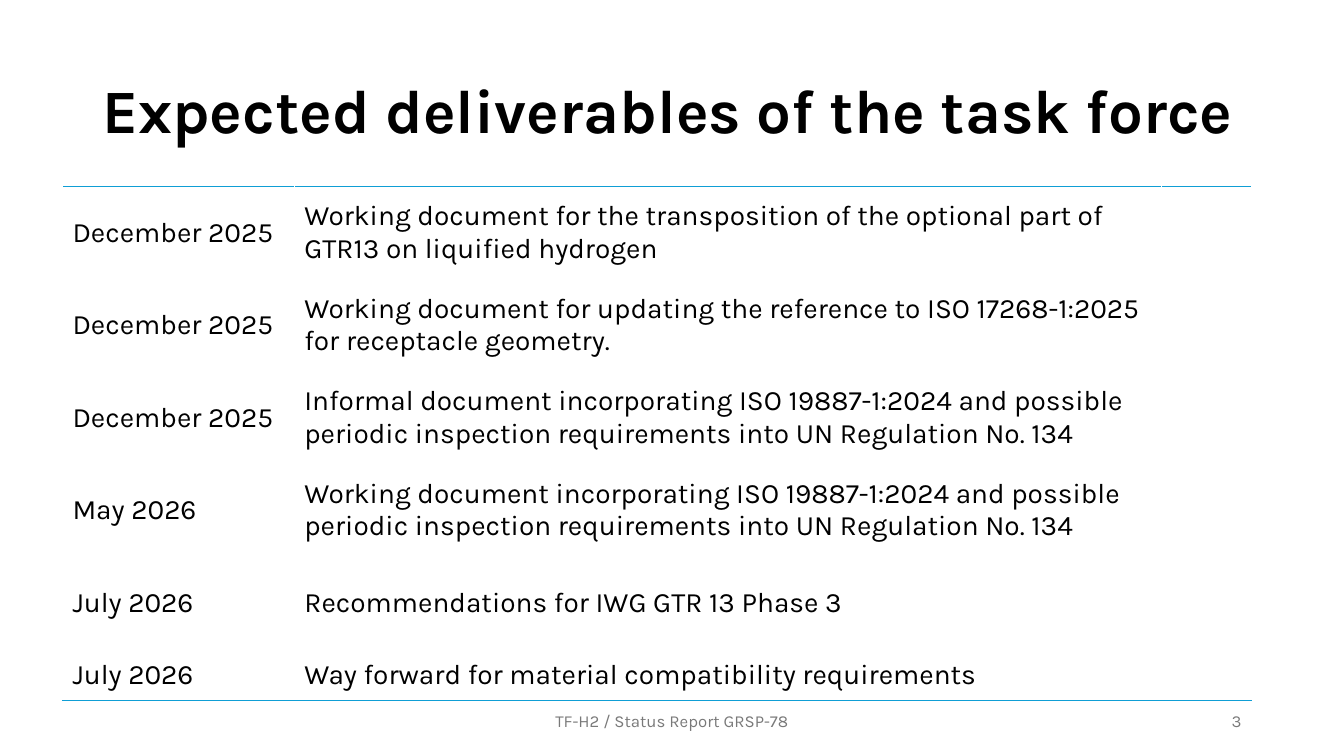
from lxml import etree
from pptx import Presentation
from pptx.dml.color import RGBColor
from pptx.enum import text
from pptx.oxml.ns import qn
from pptx.util import Pt

FONT = "Karla"
BLACK = RGBColor(0x00, 0x00, 0x00)
GRAY = RGBColor(0x79, 0x79, 0x79)
BLUE = RGBColor(0x0F, 0x9E, 0xD5)

TITLE = "Expected deliverables of the task force"
FOOTER = "TF-H2 / Status Report GRSP-78"
PAGE = "3"
DELIVERABLES = [
    ("December 2025", "Working document for the transposition of the optional part of GTR13 on liquified hydrogen"),
    ("December 2025", "Working document for updating the reference to ISO 17268-1:2025 for receptacle geometry."),
    ("December 2025", "Informal document incorporating ISO 19887-1:2024 and possible periodic inspection requirements into UN Regulation No. 134"),
    ("May 2026", "Working document incorporating ISO 19887-1:2024 and possible periodic inspection requirements into UN Regulation No. 134"),
    ("July 2026", "Recommendations for IWG GTR 13 Phase 3"),
    ("July 2026", "Way forward for material compatibility requirements"),
]
COLUMN_WIDTHS = (165.6, 619.2, 64.8)
ROW_HEIGHTS = [66.1] * 5 + [37]


def set_font(p, size, color, bold=False):
    p.font.name = FONT
    p.font.size = Pt(size)
    p.font.color.rgb = color
    p.font.bold = bold


def add_label(s, words, box, size, color, align, bold=False):
    tf = s.shapes.add_textbox(*map(Pt, box)).text_frame
    tf.word_wrap = True
    tf.vertical_anchor = text.MSO_ANCHOR.MIDDLE
    p = tf.paragraphs[0]
    p.text = words
    p.alignment = align
    set_font(p, size, color, bold)
    return p


def add_border(cell, side):
    ln = etree.Element(qn(f"a:{side}"), w=str(Pt(1)))
    fill = etree.SubElement(ln, qn("a:solidFill"))
    etree.SubElement(fill, qn("a:srgbClr"), val=str(BLUE))
    cell._tc.get_or_add_tcPr().insert(0, ln)


def add_deliverables(s):
    rows, cols = len(DELIVERABLES), len(COLUMN_WIDTHS)
    frame = s.shapes.add_table(rows, cols, Pt(44.6), Pt(133.2),
                               Pt(sum(COLUMN_WIDTHS)), Pt(sum(ROW_HEIGHTS)))
    table = frame.table
    table.first_row = table.horz_banding = False
    for column, width in zip(table.columns, COLUMN_WIDTHS):
        column.width = Pt(width)
    for i, height in enumerate(ROW_HEIGHTS):
        table.rows[i].height = Pt(height)
        for j in range(cols):
            cell = table.cell(i, j)
            cell.fill.background()
            cell.vertical_anchor = text.MSO_ANCHOR.MIDDLE
            if j < len(DELIVERABLES[i]):
                cell.text = DELIVERABLES[i][j]
                set_font(cell.text_frame.paragraphs[0], 20, BLACK)
            if i == 0:
                add_border(cell, "lnT")
            if i == rows - 1:
                add_border(cell, "lnB")


def main():
    prs = Presentation()
    prs.slide_width, prs.slide_height = Pt(960), Pt(540)
    s = prs.slides.add_slide(prs.slide_layouts[6])
    title = add_label(s, TITLE, (66, 28.8, 828, 104.4), 44, BLACK,
                      text.PP_ALIGN.LEFT, True)
    title.line_spacing = 0.9
    add_label(s, FOOTER, (318, 500.5, 324, 28.8), 12, GRAY, text.PP_ALIGN.CENTER)
    add_label(s, PAGE, (678, 500.5, 216, 28.8), 12, GRAY, text.PP_ALIGN.RIGHT)
    add_deliverables(s)
    prs.save("out.pptx")


if __name__ == "__main__":
    main()
